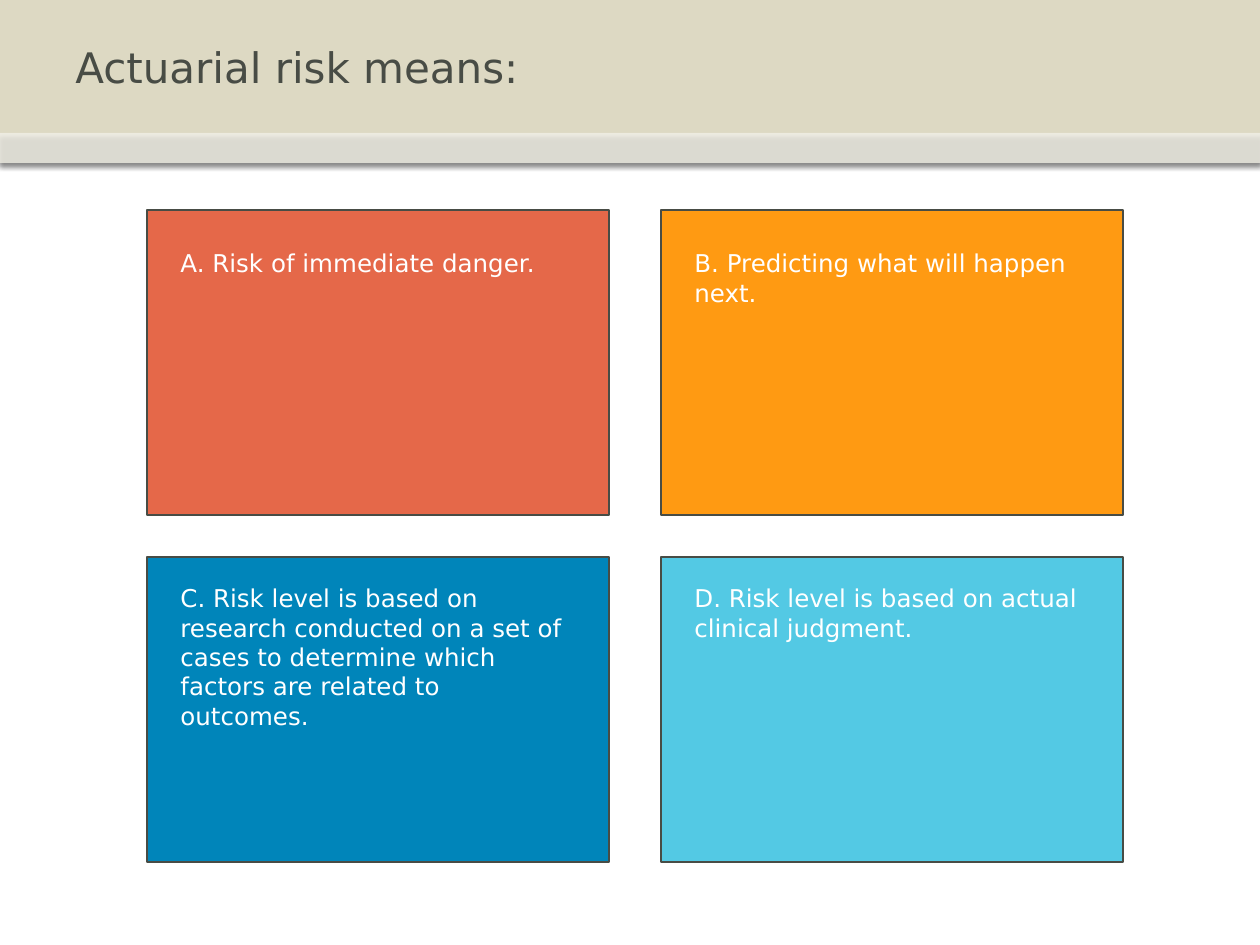
from dataclasses import dataclass

from lxml import etree
from pptx import Presentation
from pptx import util as u
from pptx.dml.color import RGBColor
from pptx.enum import shapes, text
from pptx.oxml.ns import qn

PX = 914400 / 126
FONT = "DejaVu Sans"
INK = "484C45"
WHITE = "FFFFFF"
PAGE_WIDTH, PAGE_HEIGHT = 1260, 945
CARD_LEFT, CARD_TOP = 147, 210
CARD_WIDTH, CARD_HEIGHT = 462, 305
COLUMN_STEP, ROW_STEP = 514, 347
TEXT_INSET, TEXT_WIDTH = 21, 420
ROW_TEXT_INSETS = (32, 20)


@dataclass
class Answer:
    column: int
    row: int
    fill: str
    wording: str
    text_height: int


ANSWERS = [
    Answer(0, 0, "E56849", "A. Risk of immediate danger.", 43),
    Answer(1, 0, "FF9A12", "B. Predicting what will happen next.", 72),
    Answer(0, 1, "0085BA", "C. Risk level is based on research conducted on a set of "
           "cases to determine which factors are related to outcomes.", 161),
    Answer(1, 1, "53C9E4", "D. Risk level is based on actual clinical judgment.", 72),
]


def px(length: int) -> int:
    return round(length * PX)


def color(value: str) -> RGBColor:
    return RGBColor.from_string(value)


def add_rectangle(page, left: int, top: int, width: int, height: int, fill: str):
    box = page.shapes.add_shape(
        shapes.MSO_SHAPE.RECTANGLE, px(left), px(top), px(width), px(height))
    box.shadow.inherit = False
    box.fill.solid()
    box.fill.fore_color.rgb = color(fill)
    box.line.fill.background()
    return box


def add_alpha(color_element, percent: int) -> None:
    etree.SubElement(color_element, qn("a:alpha"), val=str(percent * 1000))


def add_band(page, top: int, height: int, fill: str, opacity: int = 100) -> None:
    """Draw a full-width strip that casts a soft shadow downwards."""
    band = add_rectangle(page, 0, top, PAGE_WIDTH, height, fill)
    properties = band._element.spPr
    if opacity < 100:
        add_alpha(properties.find(qn("a:solidFill"))[0], opacity)
    shadow = etree.SubElement(
        properties.find(qn("a:effectLst")), qn("a:outerShdw"),
        blurRad=str(u.Pt(3.1)), dist=str(u.Pt(1.8)), dir="5400000",
        algn="ctr", rotWithShape="0")
    add_alpha(etree.SubElement(shadow, qn("a:srgbClr"), val="000000"), 35)


def add_text(page, left: int, top: int, width: int, height: int,
             wording: str, size: int, ink: str):
    box = page.shapes.add_textbox(px(left), px(top), px(width), px(height))
    frame = box.text_frame
    frame.word_wrap = True
    frame.text = wording
    font = frame.paragraphs[0].runs[0].font
    font.name = FONT
    font.size = u.Pt(size)
    font.color.rgb = color(ink)
    return frame


def add_answer(page, answer: Answer) -> None:
    left = CARD_LEFT + answer.column * COLUMN_STEP
    top = CARD_TOP + answer.row * ROW_STEP
    card = add_rectangle(page, left, top, CARD_WIDTH, CARD_HEIGHT, answer.fill)
    card.line.color.rgb = color(INK)
    card.line.width = u.Pt(0.75)
    frame = add_text(page, left + TEXT_INSET, top + ROW_TEXT_INSETS[answer.row],
                     TEXT_WIDTH, answer.text_height, answer.wording, 14, WHITE)
    frame.auto_size = text.MSO_AUTO_SIZE.SHAPE_TO_FIT_TEXT


def main() -> None:
    deck = Presentation()
    deck.slide_width = px(PAGE_WIDTH)
    deck.slide_height = px(PAGE_HEIGHT)
    page = deck.slides.add_slide(deck.slide_layouts[6])

    add_band(page, 0, 163, "DDD9C3")
    add_band(page, 133, 30, WHITE, opacity=53)
    title = add_text(page, 63, 0, 1134, 133, "Actuarial risk means:", 24, INK)
    title.vertical_anchor = text.MSO_ANCHOR.MIDDLE
    for answer in ANSWERS:
        add_answer(page, answer)

    deck.save("out.pptx")


if __name__ == "__main__":
    main()
